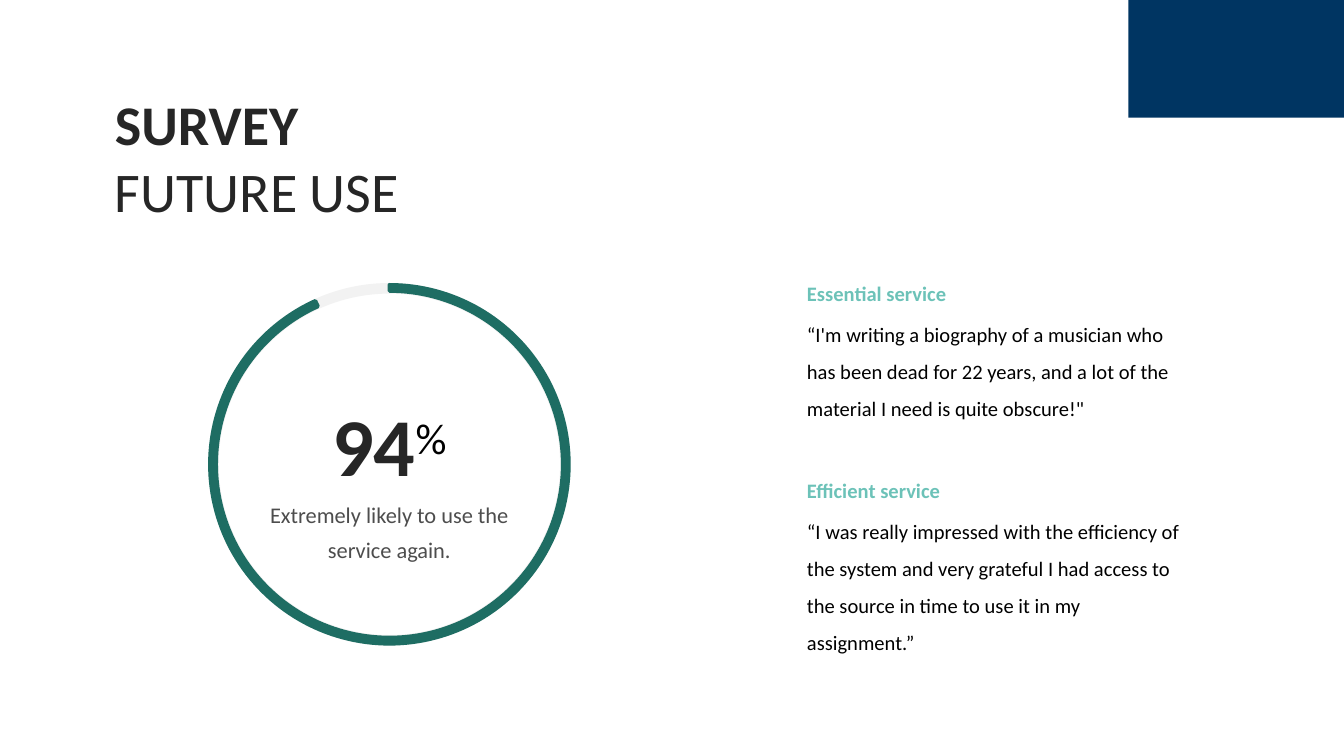
from dataclasses import dataclass

from pptx import Presentation
from pptx.dml.color import RGBColor
from pptx.enum.shapes import MSO_SHAPE
from pptx.enum.text import MSO_ANCHOR, MSO_AUTO_SIZE, PP_ALIGN
from pptx.util import Inches, Pt


@dataclass(frozen=True)
class Theme:
    """Colours, type sizes and grid cell of the slide."""
    font: str = "Calibri"
    navy: str = "003562"
    ink: str = "262626"
    black: str = "000000"
    caption: str = "4D4D4D"
    track: str = "F2F2F2"
    green: str = "1E6D63"
    mint: str = "6CC2B8"
    title_size: int = 30
    figure_size: int = 44
    percent_size: int = 40
    caption_size: int = 12
    body_size: int = 11
    ring_line: int = 2
    cell: float = 0.1


THEME = Theme()
COLUMNS, ROWS = 100, 56.25
RING = (15.63, 21.2, 26.7, 26.7)
TRACK_PERCENT, ARC_PERCENT = 1.9, 1.7
QUOTE_COLUMN, QUOTE_ROW, QUOTE_PITCH = 59.34, 19.6, 14.65
HEADING_ROWS = 3.05
QUOTES = (
    ("Essential service",
     "“I'm writing a biography of a musician who has been dead for 22 years, "
     "and a lot of the material I need is quite obscure!\""),
    ("Efficient service",
     "“I was really impressed with the efficiency of the system and very grateful "
     "I had access to the source in time to use it in my assignment.”"),
)


def cells(*counts):
    """Turn counts of grid cells into lengths."""
    return [Inches(count * THEME.cell) for count in counts]


def format_run(run, size, color, bold=False):
    """Apply the theme font with a size, colour and weight."""
    run.font.name = THEME.font
    run.font.size = Pt(size)
    run.font.bold = bold
    run.font.color.rgb = RGBColor.from_string(color)


def set_frame(text_frame, horizontal, vertical, anchor):
    """Set wrapping, margins in inches and anchor of a text frame."""
    text_frame.word_wrap = True
    text_frame.auto_size = MSO_AUTO_SIZE.NONE
    text_frame.vertical_anchor = anchor
    text_frame.margin_left = text_frame.margin_right = Inches(horizontal)
    text_frame.margin_top = text_frame.margin_bottom = Inches(vertical)


def add_title(slide, lines, position):
    """Fill the title placeholder, its first line in bold."""
    title = slide.shapes.title
    title.left, title.top, title.width, title.height = cells(*position)
    set_frame(title.text_frame, 0.07, 0.04, MSO_ANCHOR.TOP)
    title.text_frame.text = "\n".join(lines)
    for index, paragraph in enumerate(title.text_frame.paragraphs):
        paragraph.alignment = PP_ALIGN.LEFT
        format_run(paragraph.runs[0], THEME.title_size, THEME.ink, bold=index == 0)


def add_solid(slide, kind, position, color, line_width=0):
    """Add a preset shape in one colour, outlined if a line width is given."""
    shape = slide.shapes.add_shape(kind, *cells(*position))
    shape.shadow.inherit = False
    shape.fill.solid()
    shape.fill.fore_color.rgb = RGBColor.from_string(color)
    if line_width:
        shape.line.color.rgb = RGBColor.from_string(color)
        shape.line.width = Pt(line_width)
    else:
        shape.line.fill.background()
    return shape


def add_progress_ring(slide, figure, caption):
    """Add the pale ring with its label and the green arc over it."""
    track = add_solid(slide, MSO_SHAPE.DONUT, RING, THEME.track, THEME.ring_line)
    track.adjustments[0] = TRACK_PERCENT / 100
    text_frame = track.text_frame
    set_frame(text_frame, 0, 0, MSO_ANCHOR.MIDDLE)
    text_frame.text = f"{figure}\n{caption}"
    number, label = text_frame.paragraphs
    percent = number.add_run()
    percent.text = "%"
    format_run(number.runs[0], THEME.figure_size, THEME.ink, bold=True)
    format_run(percent, THEME.percent_size, THEME.black)
    percent.font._element.set("baseline", "30000")
    format_run(label.runs[0], THEME.caption_size, THEME.caption)
    for paragraph in text_frame.paragraphs:
        paragraph.alignment = PP_ALIGN.CENTER
        paragraph.line_spacing = 1.3

    arc = add_solid(slide, MSO_SHAPE.BLOCK_ARC, RING, THEME.green, THEME.ring_line)
    for index, value in enumerate((176.62, 162, ARC_PERCENT / 100)):
        arc.adjustments[index] = value
    arc._element.spPr.xfrm.set("flipH", "1")


def add_text(slide, text, position, color, bold=False):
    """Add a text box with one paragraph of body text."""
    text_frame = slide.shapes.add_textbox(*cells(*position)).text_frame
    set_frame(text_frame, 0.07, 0.04, MSO_ANCHOR.TOP)
    text_frame.text = text
    paragraph = text_frame.paragraphs[0]
    paragraph.line_spacing = 1.5
    format_run(paragraph.runs[0], THEME.body_size, color, bold)


def add_quote(slide, row, heading, quote):
    """Add a quotation and the coloured heading above it."""
    add_text(slide, quote, (QUOTE_COLUMN, row + HEADING_ROWS, 29.8, 7), THEME.black)
    add_text(slide, heading, (QUOTE_COLUMN, row, 13.3, HEADING_ROWS), THEME.mint, bold=True)


def main():
    """Build the survey slide and save it."""
    presentation = Presentation()
    presentation.slide_width, presentation.slide_height = cells(COLUMNS, ROWS)
    slide = presentation.slides.add_slide(presentation.slide_layouts[5])
    add_solid(slide, MSO_SHAPE.RECTANGLE, (83.95, 0, 16.05, 8.75), THEME.navy)
    add_title(slide, ("SURVEY", "FUTURE USE"), (7.85, 6.27, 74.1, 9.8))
    add_progress_ring(slide, "94", "Extremely likely to use the service again.")
    for index, (heading, quote) in enumerate(QUOTES):
        add_quote(slide, QUOTE_ROW + index * QUOTE_PITCH, heading, quote)
    presentation.save("out.pptx")


if __name__ == "__main__":
    main()
